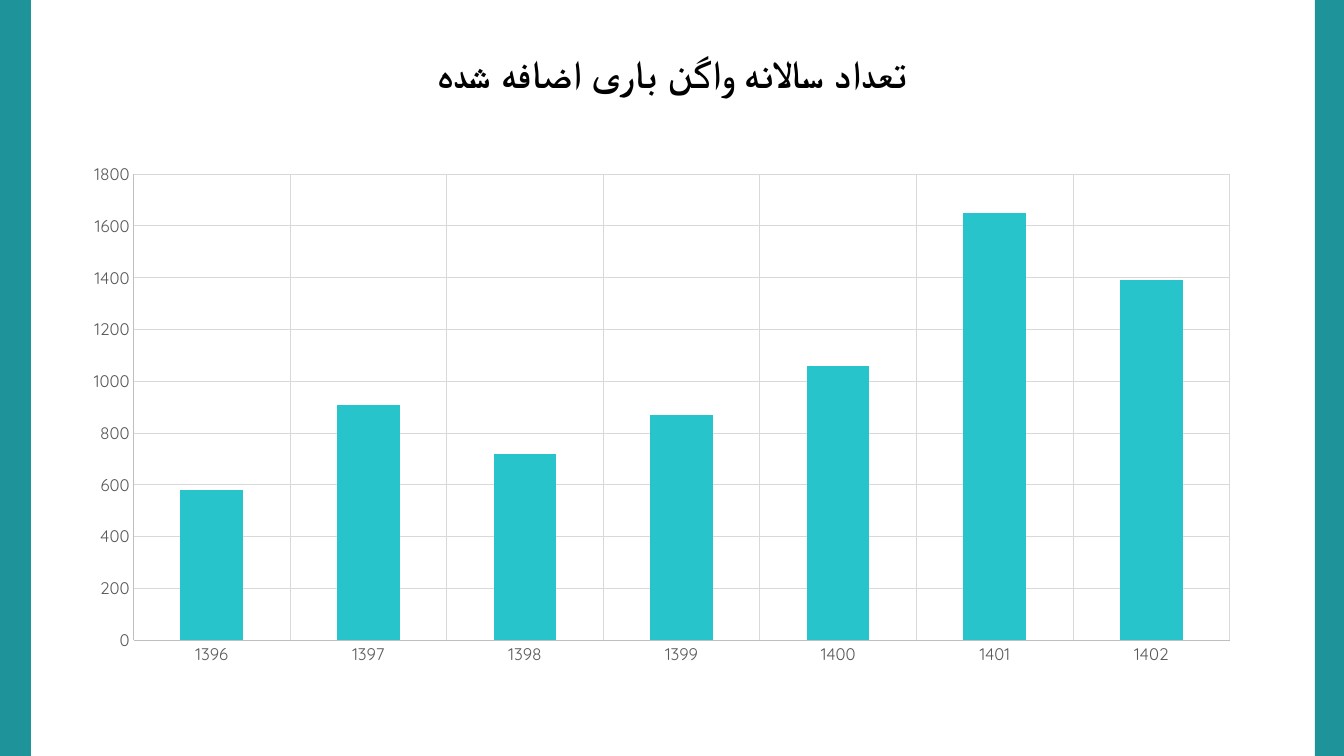
from lxml.etree import SubElement
from pptx import Presentation
from pptx.chart.data import CategoryChartData
from pptx.dml.color import RGBColor
from pptx.enum.chart import XL_CHART_TYPE, XL_TICK_MARK
from pptx.enum.shapes import MSO_SHAPE
from pptx.enum.text import MSO_ANCHOR, PP_ALIGN
from pptx.oxml.ns import qn
from pptx.util import Pt

FONT = "Quicksand"
W, H = 1344, 756


def px(n):
    return round(n * 914400 / 100.8)


def rgb(color):
    return RGBColor.from_string(color)


prs = Presentation()
prs.slide_width, prs.slide_height = px(W), px(H)
s = prs.slides.add_slide(prs.slide_layouts[5])

# Side bands
for left, width in ((0, 31), (1315, W - 1315)):
    sp = s.shapes.add_shape(MSO_SHAPE.RECTANGLE, px(left), 0, px(width), px(H))
    sp.shadow.inherit = False
    sp.fill.solid()
    sp.fill.fore_color.rgb = rgb("1E9399")
    sp.line.fill.background()

# Title, right to left
title = s.shapes.title
title.left, title.top, title.width, title.height = px(309), px(44), px(726), px(58)
tf = title.text_frame
tf.word_wrap = True
tf.vertical_anchor = MSO_ANCHOR.MIDDLE
p = tf.paragraphs[0]
p.alignment = PP_ALIGN.CENTER
p._p.get_or_add_pPr().set("rtl", "1")
r = p.add_run()
r.text = "تعداد سالانه واگن باری اضافه شده"
r.font.size, r.font.bold, r.font.name = Pt(28), True, FONT
r.font.color.rgb = rgb("000000")
SubElement(r.font._element, qn("a:cs")).set("typeface", FONT)

# Wagons added each year
data = CategoryChartData()
data.categories = [str(year) for year in range(1396, 1403)]
data.add_series("Series 1", (580, 910, 720, 870, 1060, 1650, 1390))
chart = s.shapes.add_chart(XL_CHART_TYPE.COLUMN_CLUSTERED,
                           px(67), px(149), px(1210), px(526), data).chart
chart.has_title = False
chart.has_legend = False
chart.font.name, chart.font.size = FONT, Pt(10)
chart.font.color.rgb = rgb("000000")

plot = chart.plots[0]
plot.gap_width = 150
plot.vary_by_categories = False
fill = plot.series[0].format.fill
fill.solid()
fill.fore_color.rgb = rgb("28C4CC")

# Axes and grid
for axis in (chart.category_axis, chart.value_axis):
    axis.major_tick_mark = axis.minor_tick_mark = XL_TICK_MARK.NONE
    axis.has_major_gridlines = True
    for line, color in ((axis.format.line, "BFBFBF"),
                        (axis.major_gridlines.format.line, "D9D9D9")):
        line.color.rgb = rgb(color)
        line.width = Pt(0.75)
    font = axis.tick_labels.font
    font.name, font.size = FONT, Pt(12)
    font.color.rgb = rgb("595959")
chart.value_axis.minimum_scale = 0
chart.value_axis.maximum_scale = 1800
chart.value_axis.major_unit = 200

# Inner plot area, as fractions of the chart
area = chart._chartSpace.chart.plotArea
layout = area.find(qn("c:layout"))
if layout is None:
    layout = SubElement(area, qn("c:layout"))
    area.insert(0, layout)
manual = SubElement(layout, qn("c:manualLayout"))
for tag, val in (("layoutTarget", "inner"), ("xMode", "edge"), ("yMode", "edge"),
                 ("x", "0.055"), ("y", "0.048"), ("w", "0.906"), ("h", "0.886")):
    SubElement(manual, qn(f"c:{tag}")).set("val", val)

prs.save("out.pptx")
